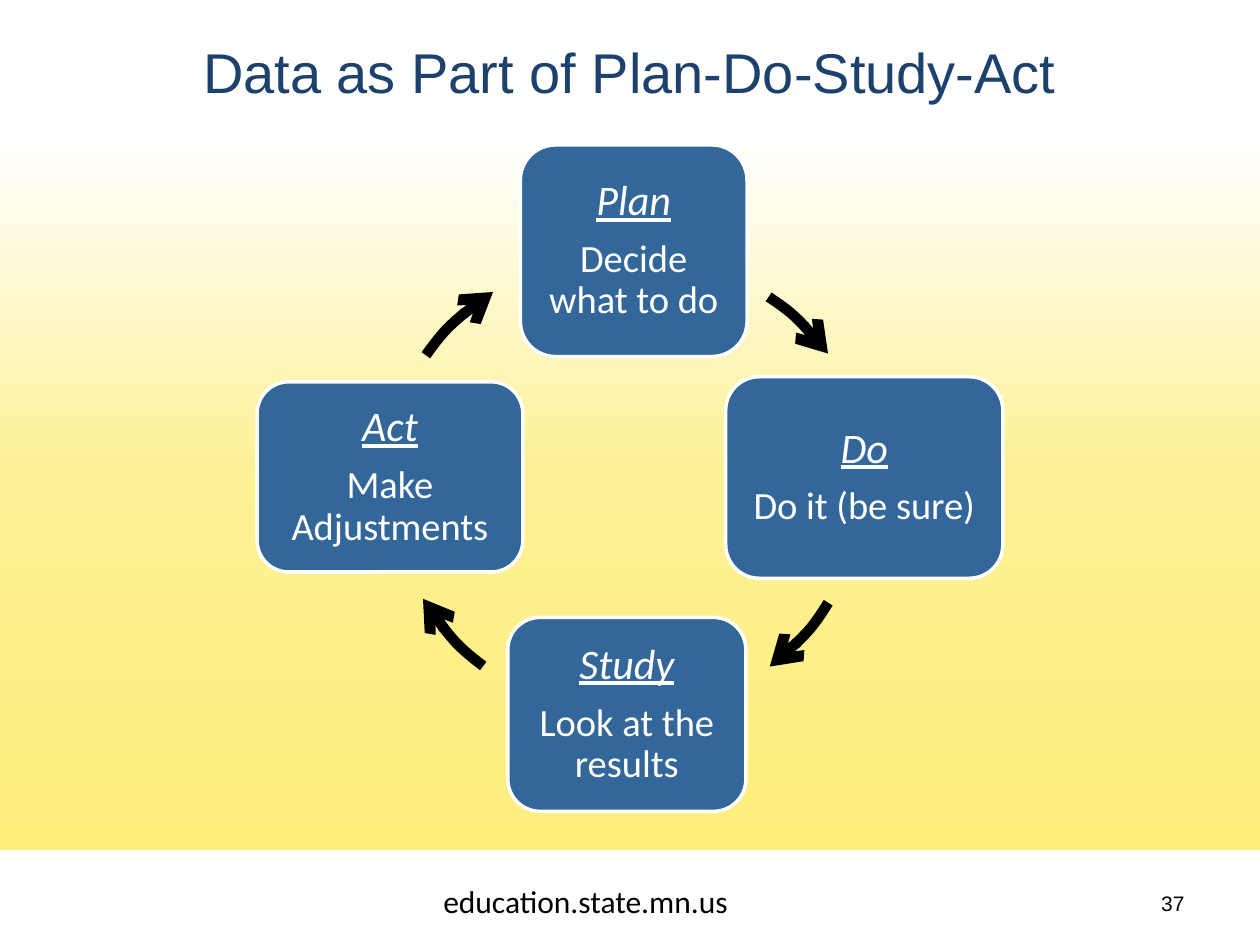
from copy import deepcopy

from lxml import etree
from pptx import Presentation
from pptx import util as u
from pptx.dml.color import RGBColor
from pptx.enum import shapes, text
from pptx.oxml.ns import qn

NAVY, BLUE, BLACK, WHITE = "1B416C", "336699", "000000", "FFFFFF"
YELLOW, PALE_YELLOW = "FDEE7B", "FDF195"

# name, action, left, top, width, height
STEPS = [
    ("Plan", "Decide what to do", 4.13, 1.15, 1.8, 1.68),
    ("Do", "Do it (be sure)", 5.76, 2.99, 2.2, 1.6),
    ("Study", "Look at the results", 4.03, 4.9, 1.89, 1.54),
    ("Act", "Make Adjustments", 2.04, 3.03, 2.11, 1.51),
]
# left and top of the circle, start and end angle of the arrow leaving each step
ARROWS = [
    (3.17, 2.04, 303.7, 323.6),
    (3.09, 1.9, 32, 53),
    (3.09, 1.9, 127.2, 149.1),
    (3.03, 2.03, 215.5, 237.9),
]
CIRCLE_SIZE = 3.77


def color(hex_string):
    return RGBColor.from_string(hex_string)


class SlideBuilder:
    heading_font, body_font = "Arial", "Calibri"

    def __init__(self, presentation):
        self.slide = presentation.slides.add_slide(presentation.slide_layouts[5])
        self.shapes = self.slide.shapes

    def format_paragraph(self, paragraph, font, size, font_color, align):
        paragraph.alignment = align
        for run in paragraph.runs:
            run.font.name = font
            run.font.size = u.Pt(size)
            run.font.color.rgb = color(font_color)

    def preset(self, kind, left, top, width, height):
        """Add a preset shape without a shadow."""
        shape = self.shapes.add_shape(
            kind, u.Inches(left), u.Inches(top), u.Inches(width), u.Inches(height))
        shape.shadow.inherit = False
        return shape

    def outline(self, shape, line_color, width):
        shape.line.color.rgb = color(line_color)
        shape.line.width = u.Pt(width)

    def background(self, width, height, stops):
        """Add a panel shaded from bottom to top, behind everything else."""
        shape = self.preset(shapes.MSO_SHAPE.RECTANGLE, 0, 0, width, height)
        shape.line.fill.background()
        shape.fill.gradient()
        shape.fill.gradient_angle = 90
        stop_list = shape._element.spPr.find(qn("a:gradFill")).find(qn("a:gsLst"))
        while len(stop_list) < len(stops):
            stop_list.append(deepcopy(stop_list[0]))
        for stop, (position, stop_color) in zip(shape.fill.gradient_stops, stops):
            stop.position = position
            stop.color.rgb = color(stop_color)
        self.shapes._spTree.insert(2, shape._element)

    def title(self, wording, left, top, width, height):
        title = self.shapes.title
        title.left, title.top = u.Inches(left), u.Inches(top)
        title.width, title.height = u.Inches(width), u.Inches(height)
        frame = title.text_frame
        frame.text = wording
        frame.vertical_anchor = text.MSO_ANCHOR.TOP
        self.format_paragraph(
            frame.paragraphs[0], self.heading_font, 32, NAVY, text.PP_ALIGN.CENTER)

    def label(self, wording, left, top, width, height, font, size, align):
        box = self.shapes.add_textbox(
            u.Inches(left), u.Inches(top), u.Inches(width), u.Inches(height))
        box.text_frame.word_wrap = True
        box.text_frame.text = wording
        self.format_paragraph(box.text_frame.paragraphs[0], font, size, BLACK, align)

    def step(self, name, action, left, top, width, height):
        shape = self.preset(
            shapes.MSO_SHAPE.ROUNDED_RECTANGLE, left, top, width, height)
        shape.fill.solid()
        shape.fill.fore_color.rgb = color(BLUE)
        self.outline(shape, WHITE, 2)
        frame = shape.text_frame
        frame.word_wrap = True
        frame.vertical_anchor = text.MSO_ANCHOR.MIDDLE
        frame.margin_left = frame.margin_right = u.Inches(0.1)
        frame.margin_top = frame.margin_bottom = u.Inches(0.1)
        frame.text = f"{name}\n{action}"
        for paragraph, size in zip(frame.paragraphs, (24, 22)):
            self.format_paragraph(
                paragraph, self.body_font, size, WHITE, text.PP_ALIGN.CENTER)
            paragraph.line_spacing = 0.9
            paragraph.space_after = u.Pt(0.35 * size)
        name_font = frame.paragraphs[0].runs[0].font
        name_font.italic = name_font.underline = True

    def curved_arrow(self, left, top, start, end):
        """Add a clockwise arc with an arrowhead; angles are in degrees."""
        shape = self.preset(shapes.MSO_SHAPE.ARC, left, top, CIRCLE_SIZE, CIRCLE_SIZE)
        for index, angle in enumerate((start, end)):
            # Angles are stored as 60000ths of a degree, adjustments as 100000ths
            shape.adjustments[index] = angle * 0.6
        shape.fill.background()
        self.outline(shape, BLACK, 6)
        etree.SubElement(shape.line._get_or_add_ln(), qn("a:tailEnd"), type="arrow")


def main():
    presentation = Presentation()
    presentation.slide_width, presentation.slide_height = u.Inches(10), u.Inches(7.5)
    builder = SlideBuilder(presentation)
    builder.background(10, 6.75, [(0, YELLOW), (0.44, PALE_YELLOW), (0.84, WHITE)])
    builder.title("Data as Part of Plan-Do-Study-Act", 0.5, 0.25, 9, 1.25)
    builder.label("education.state.mn.us", 3.42, 6.95, 3.17, 0.4,
                  builder.body_font, 18, text.PP_ALIGN.LEFT)
    builder.label("37", 7.17, 7.02, 2.33, 0.4,
                  builder.heading_font, 12, text.PP_ALIGN.RIGHT)
    for step, arrow in zip(STEPS, ARROWS):
        builder.step(*step)
        builder.curved_arrow(*arrow)
    presentation.save("out.pptx")


if __name__ == "__main__":
    main()
